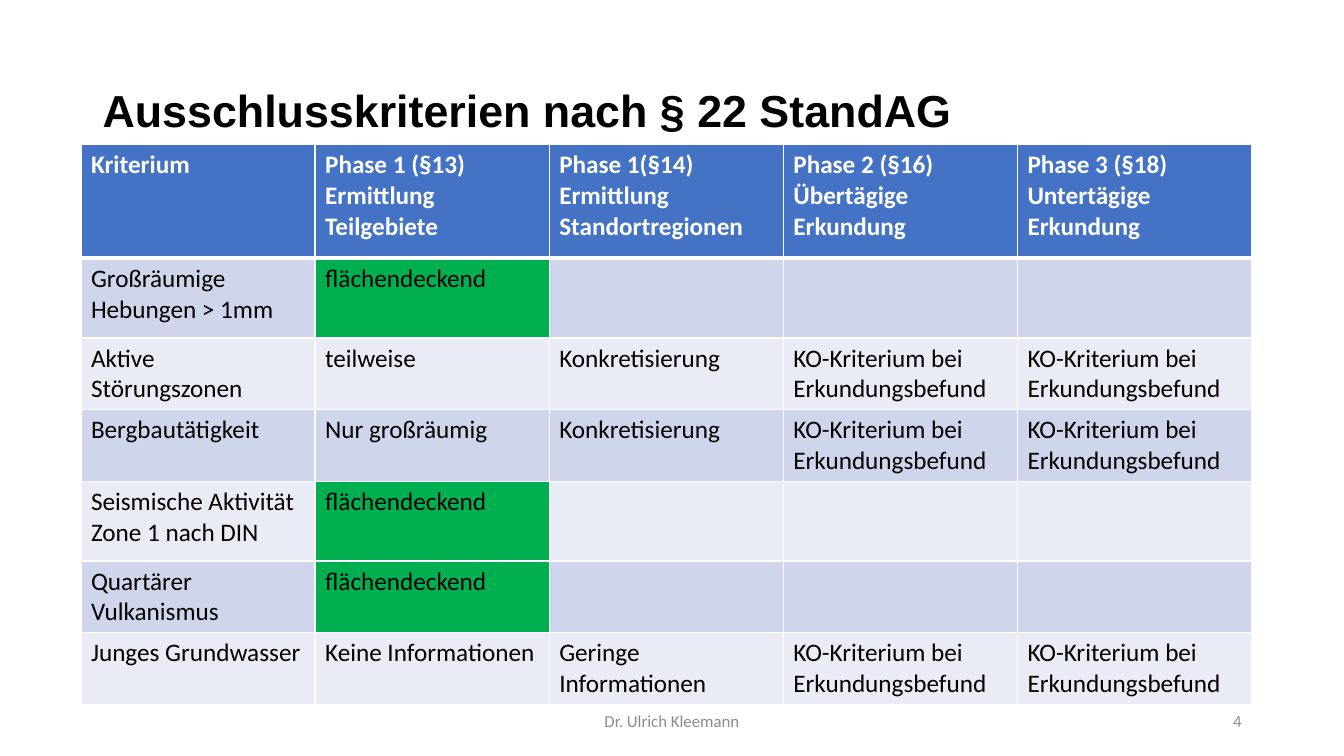
from lxml.etree import SubElement
from pptx import Presentation
from pptx.dml.color import RGBColor
from pptx.enum.text import MSO_ANCHOR, PP_ALIGN
from pptx.oxml.ns import qn
from pptx.util import Cm, Pt

HUES = {
    "ink": "000000", "paper": "FFFFFF", "head": "4472C4", "odd": "CFD5EA",
    "even": "E9EBF5", "full": "00B050", "note": "8C8C8C",
}
FULL = "flächendeckend"
KO = "KO-Kriterium bei Erkundungsbefund"
ROWS = [
    ["Kriterium", "Phase 1 (§13)\nErmittlung Teilgebiete",
     "Phase 1(§14)\nErmittlung  Standortregionen",
     "Phase 2 (§16)\nÜbertägige Erkundung",
     "Phase 3 (§18)\nUntertägige Erkundung"],
    ["Großräumige Hebungen > 1mm", FULL, "", "", ""],
    ["Aktive Störungszonen", "teilweise", "Konkretisierung", KO, KO],
    ["Bergbautätigkeit", "Nur großräumig", "Konkretisierung", KO, KO],
    ["Seismische Aktivität\nZone 1 nach DIN", FULL, "", "", ""],
    ["Quartärer Vulkanismus", FULL, "", "", ""],
    ["Junges Grundwasser", "Keine Informationen", "Geringe Informationen", KO, KO],
]
HEIGHTS = [2.87, 2.01, 1.8, 1.8, 2.01, 1.8, 1.8]


def style(frame, size, hue, font="Calibri", bold=False, align=PP_ALIGN.LEFT):
    for para in frame.paragraphs:
        para.alignment = align
        for run in para.runs:
            run.font.name = font
            run.font.size = Pt(size)
            run.font.bold = bold
            run.font.color.rgb = RGBColor.from_string(HUES[hue])


def add_title(slide, left, top, width, height):
    title = slide.shapes.title
    title.left, title.top = Cm(left), Cm(top)
    title.width, title.height = Cm(width), Cm(height)
    frame = title.text_frame
    frame.text = "Ausschlusskriterien nach § 22 StandAG"
    frame.vertical_anchor = MSO_ANCHOR.MIDDLE
    frame.paragraphs[0].line_spacing = 0.9
    style(frame, 32, "ink", "Arial", True)


def add_edges(cell, row):
    props = cell._tc.get_or_add_tcPr()
    thick = {"lnT": row == 1, "lnB": row == 0}
    for side in ("lnL", "lnR", "lnT", "lnB"):
        width = Pt(3 if thick.get(side) else 1)
        line = SubElement(props, qn("a:" + side), w=str(int(width)))
        fill = SubElement(line, qn("a:solidFill"))
        SubElement(fill, qn("a:srgbClr"), val=HUES["paper"])


def add_grid(slide, left, top, width):
    count = len(ROWS[0])
    grid = slide.shapes.add_table(
        len(ROWS), count, Cm(left), Cm(top), Cm(width), Cm(sum(HEIGHTS))).table
    for col in grid.columns:
        col.width = Cm(width / count)
    for row, texts in enumerate(ROWS):
        grid.rows[row].height = Cm(HEIGHTS[row])
        band = "head" if row == 0 else "odd" if row % 2 else "even"
        for col, text in enumerate(texts):
            cell = grid.cell(row, col)
            add_edges(cell, row)
            cell.fill.solid()
            hue = "full" if text == FULL else band
            cell.fill.fore_color.rgb = RGBColor.from_string(HUES[hue])
            cell.text_frame.text = text
            style(cell.text_frame, 18, "ink" if row else "paper", bold=row == 0)


def add_note(slide, left, top, width, height, text, align):
    box = slide.shapes.add_textbox(Cm(left), Cm(top), Cm(width), Cm(height))
    frame = box.text_frame
    frame.word_wrap = True
    frame.vertical_anchor = MSO_ANCHOR.MIDDLE
    frame.text = text
    style(frame, 12, "note", align=align)


def main():
    deck = Presentation()
    deck.slide_width, deck.slide_height = Cm(33.87), Cm(19.05)
    slide = deck.slides.add_slide(deck.slide_layouts[5])
    add_title(slide, 2.33, 1.01, 29.21, 3.68)
    add_grid(slide, 2.04, 3.64, 29.5)
    add_note(slide, 23.92, 17.66, 7.62, 1.01, "4", PP_ALIGN.RIGHT)
    add_note(slide, 11.22, 17.66, 11.43, 1.01, "Dr. Ulrich Kleemann", PP_ALIGN.CENTER)
    deck.save("out.pptx")


if __name__ == "__main__":
    main()
